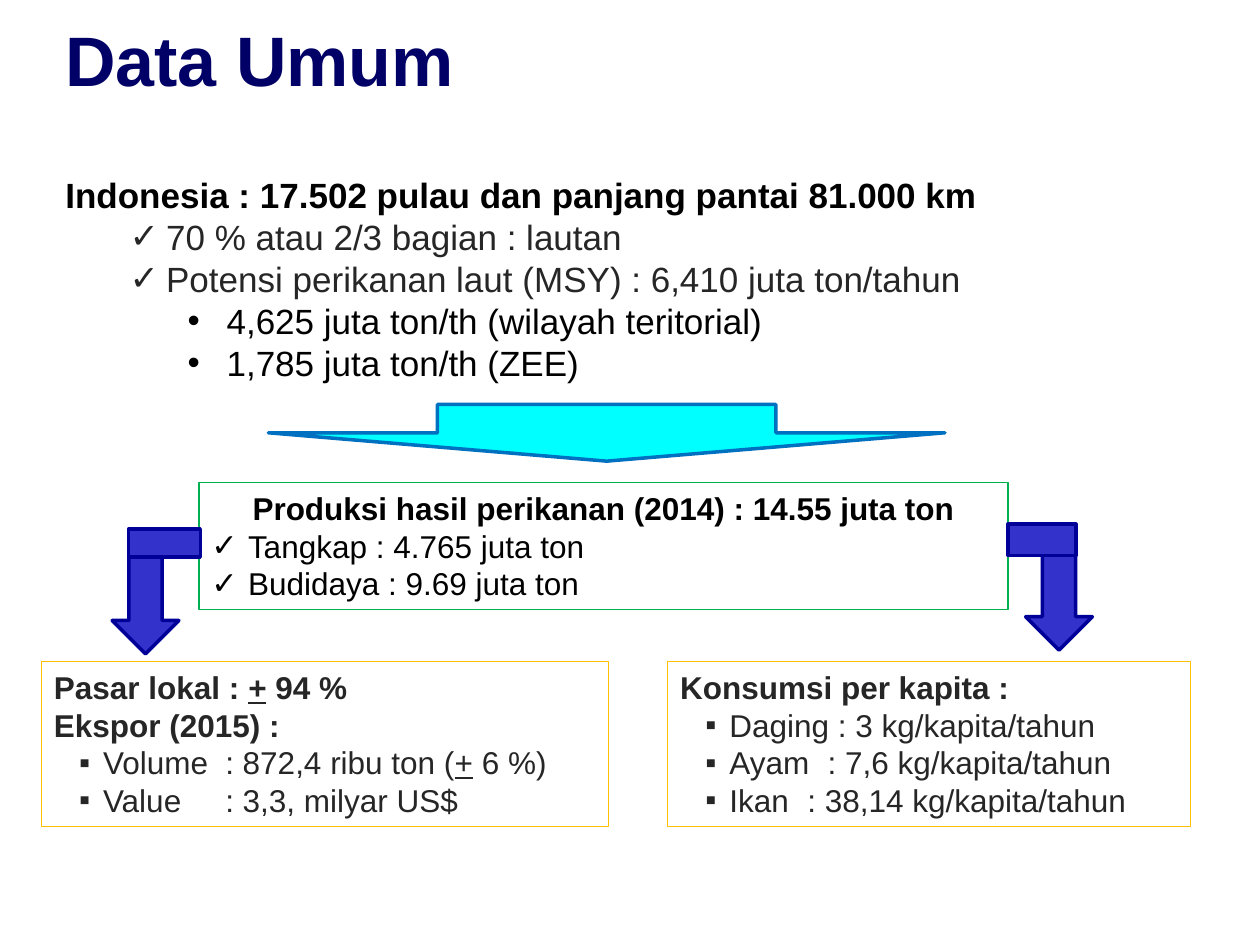
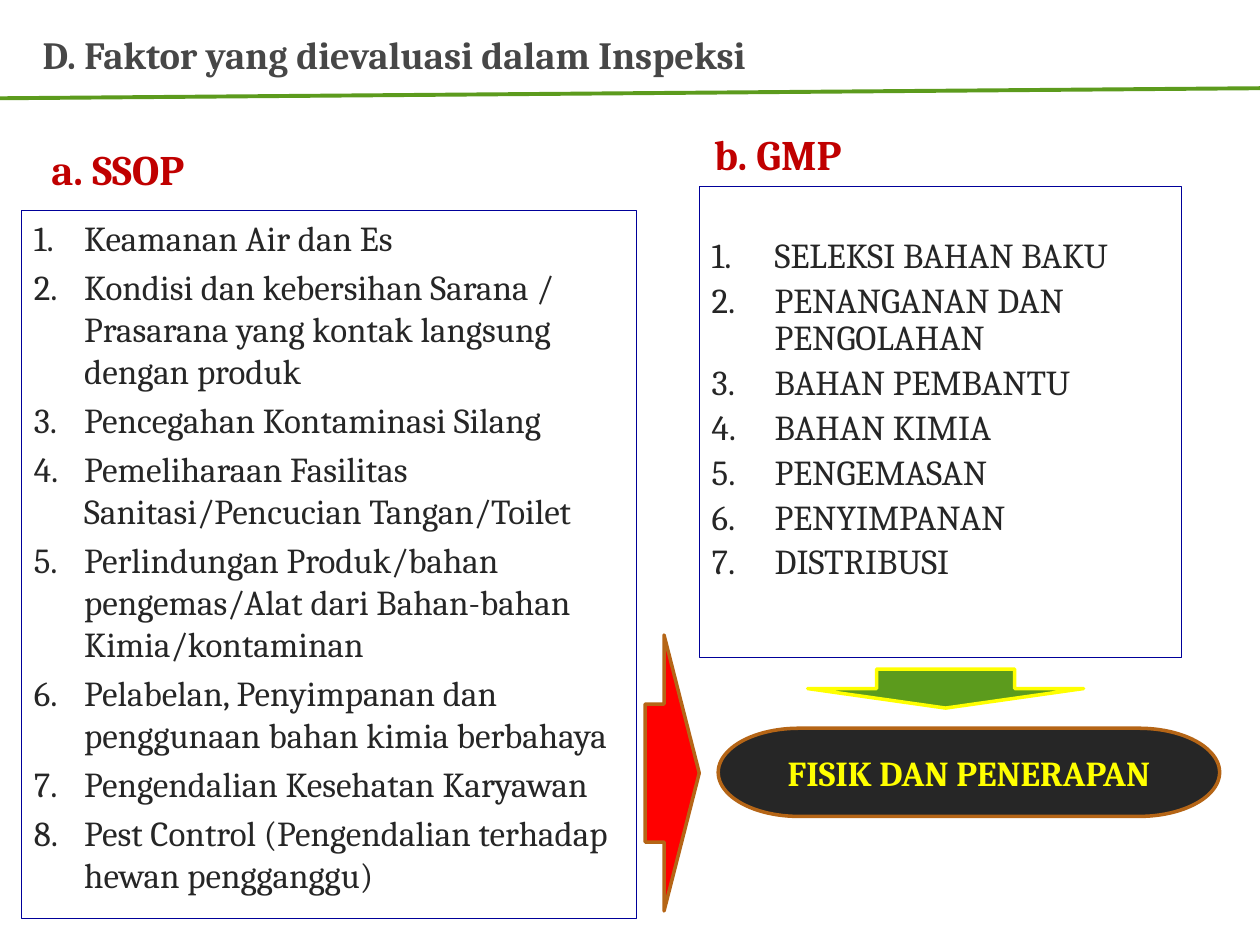
from dataclasses import dataclass
from typing import Optional

from lxml.etree import SubElement
from pptx import Presentation
from pptx.dml.color import RGBColor
from pptx.enum.shapes import MSO_CONNECTOR, MSO_SHAPE
from pptx.enum.text import MSO_ANCHOR, PP_ALIGN
from pptx.oxml.ns import qn
from pptx.slide import Slide
from pptx.util import Emu, Inches, Pt

BLACK = RGBColor(0x00, 0x00, 0x00)
WHITE = RGBColor(0xFF, 0xFF, 0xFF)
CHARCOAL = RGBColor(0x26, 0x26, 0x26)
GRAY = RGBColor(0x47, 0x47, 0x47)
MIDNIGHT = RGBColor(0x00, 0x00, 0x66)
NAVY = RGBColor(0x00, 0x00, 0x99)
INDIGO = RGBColor(0x33, 0x33, 0xCC)
BLUE = RGBColor(0x00, 0x70, 0xC0)
CYAN = RGBColor(0x00, 0xFF, 0xFF)
GREEN = RGBColor(0x00, 0xB0, 0x50)
LEAF = RGBColor(0x5C, 0x9B, 0x1D)
GOLD = RGBColor(0xFF, 0xC0, 0x00)
YELLOW = RGBColor(0xFF, 0xFF, 0x00)
RED = RGBColor(0xFF, 0x00, 0x00)
CRIMSON = RGBColor(0xC0, 0x00, 0x00)
BROWN = RGBColor(0xB5, 0x65, 0x16)

SLIDE_WIDTH, SLIDE_HEIGHT = Inches(10), Inches(7.5)
COLUMN = SLIDE_WIDTH // 100
ROW = SLIDE_HEIGHT // 75
NUMBERED = "arabicPeriod"
CHECK, DOT, SQUARE = "✓", "•", "▪"


@dataclass(frozen=True)
class Area:
    column: float
    row: float
    columns: float
    rows: float

    def lengths(self) -> tuple[Emu, ...]:
        return (Emu(round(self.column * COLUMN)), Emu(round(self.row * ROW)),
                Emu(round(self.columns * COLUMN)), Emu(round(self.rows * ROW)))


@dataclass(frozen=True)
class Style:
    font: str
    size: int
    color: RGBColor
    bold: bool = False


@dataclass(frozen=True)
class Line:
    text: str
    bold: bool = False
    bullet: str = ""
    margin: float = 0
    hanging: float = 0
    tab: float = 0
    align: PP_ALIGN = PP_ALIGN.LEFT


@dataclass(frozen=True)
class Panel:
    area: Area
    style: Style
    lines: list[Line]
    border: Optional[RGBColor] = None
    fill: Optional[RGBColor] = None
    shape: MSO_SHAPE = MSO_SHAPE.RECTANGLE
    border_width: float = 0.75
    anchor: MSO_ANCHOR = MSO_ANCHOR.TOP
    top_inset: float = 0.5
    spacing: float = 1
    before: float = 0


@dataclass(frozen=True)
class Block:
    area: Area
    fill: RGBColor
    border: RGBColor
    shape: MSO_SHAPE = MSO_SHAPE.DOWN_ARROW
    rotation: float = 0
    head: Optional[float] = None


def add_shape(page: Slide, kind: MSO_SHAPE, area: Area, fill: Optional[RGBColor],
              border: Optional[RGBColor], width: float):
    shape = page.shapes.add_shape(kind, *area.lengths())
    shape.shadow.inherit = False
    if fill is None:
        shape.fill.background()
    else:
        shape.fill.solid()
        shape.fill.fore_color.rgb = fill
    if border is None:
        shape.line.fill.background()
    else:
        shape.line.color.rgb = border
        shape.line.width = Pt(width)
    return shape


def add_block(page: Slide, block: Block) -> None:
    shape = add_shape(page, block.shape, block.area, block.fill, block.border, 2)
    shape.rotation = block.rotation
    if block.head is not None:
        shape.adjustments[1] = block.head


def set_indent(para, line: Line) -> None:
    properties = para._p.get_or_add_pPr()
    properties.set("marL", str(round(line.margin * COLUMN)))
    properties.set("indent", str(round(-line.hanging * COLUMN)))
    if line.bullet == NUMBERED:
        SubElement(properties, qn("a:buFont"), typeface="+mj-lt")
        SubElement(properties, qn("a:buAutoNum"), type=NUMBERED)
    elif line.bullet:
        SubElement(properties, qn("a:buFont"), typeface="Arial")
        SubElement(properties, qn("a:buChar"), char=line.bullet)
    else:
        SubElement(properties, qn("a:buNone"))
    if line.tab:
        tabs = SubElement(properties, qn("a:tabLst"))
        SubElement(tabs, qn("a:tab"), pos=str(round(line.tab * COLUMN)), algn="l")


def add_spans(para, line: Line, style: Style) -> None:
    for position, text in enumerate(line.text.split("_")):
        span = para.add_run()
        span.text = text
        span.font.name = style.font
        span.font.size = Pt(style.size)
        span.font.color.rgb = style.color
        span.font.bold = style.bold or line.bold
        span.font.underline = position % 2 == 1


def add_panel(page: Slide, panel: Panel) -> None:
    if panel.border or panel.fill:
        box = add_shape(page, panel.shape, panel.area, panel.fill,
                        panel.border, panel.border_width)
    else:
        box = page.shapes.add_textbox(*panel.area.lengths())
    frame = box.text_frame
    frame.word_wrap = True
    frame.vertical_anchor = panel.anchor
    frame.margin_top = round(panel.top_inset * ROW)
    for position, line in enumerate(panel.lines):
        para = frame.add_paragraph() if position else frame.paragraphs[0]
        para.alignment = line.align
        set_indent(para, line)
        para.line_spacing = panel.spacing
        if position:
            para.space_before = Pt(panel.before)
        add_spans(para, line, panel.style)


def add_rule(page: Slide, start_row: float, end_row: float) -> None:
    rule = page.shapes.add_connector(MSO_CONNECTOR.STRAIGHT, 0, round(start_row * ROW),
                                     SLIDE_WIDTH, round(end_row * ROW))
    rule.line.color.rgb = LEAF
    rule.line.width = Pt(2.25)
    SubElement(rule._element.spPr, qn("a:effectLst"))


def numbered(texts: list[str], indent: float) -> list[Line]:
    return [Line(text, bullet=NUMBERED, margin=indent, hanging=indent) for text in texts]


def heading(area: Area, text: str, style: Style, **options) -> Panel:
    return Panel(area, style, [Line(text)], **options)


def build_general_data(page: Slide) -> None:
    check = {"bullet": CHECK, "margin": 2.9, "hanging": 2.9}
    square = {"bullet": SQUARE, "margin": 3.9, "hanging": 1.9}
    body = Style("Arial", 18, CHARCOAL)
    facts = Area(4.2, 13.3, 82.5, 18.1)
    potential = {"bullet": CHECK, "margin": 8, "hanging": 2.9}
    zone = {"bullet": DOT, "margin": 12.8, "hanging": 3.1}
    add_panel(page, Panel(facts, Style("Arial", 20, BLACK), [
        Line("Indonesia : 17.502 pulau dan panjang pantai 81.000 km", bold=True),
        Line("70 % atau 2/3 bagian : lautan", **potential),
        Line("Potensi perikanan laut (MSY) : 6,410 juta ton/tahun", **potential),
        Line("4,625 juta ton/th (wilayah teritorial)", **zone),
        Line("1,785 juta ton/th (ZEE)", **zone)], fill=WHITE))
    for para in page.shapes[0].text_frame.paragraphs[1:3]:
        para.runs[0].font.color.rgb = CHARCOAL

    add_panel(page, Panel(Area(53, 52.5, 41.5, 13.1), body, [
        Line("Konsumsi per kapita :", bold=True),
        Line("Daging : 3 kg/kapita/tahun", **square),
        Line("Ayam\t: 7,6 kg/kapita/tahun", tab=11.7, **square),
        Line("Ikan\t: 38,14 kg/kapita/tahun", tab=10.1, **square)], GOLD, WHITE))
    add_panel(page, Panel(Area(15.8, 38.3, 64.2, 10.1), Style("Arial", 18, BLACK), [
        Line("Produksi hasil perikanan (2014) : 14.55 juta ton", bold=True,
             align=PP_ALIGN.CENTER),
        Line("Tangkap : 4.765 juta ton", **check),
        Line("Budidaya : 9.69 juta ton", **check)], GREEN, WHITE))
    add_panel(page, Panel(Area(3.3, 52.5, 45, 13.1), body, [
        Line("Pasar lokal : _+_ 94 %", bold=True),
        Line("Ekspor (2015) :", bold=True),
        Line("Volume\t: 872,4 ribu ton (_+_ 6 %)", tab=13.6, **square),
        Line("Value\t: 3,3, milyar US$", tab=13.6, **square)], GOLD, WHITE))

    add_block(page, Block(Area(21.3, 32.1, 53.7, 4.5), CYAN, BLUE))
    for arrow, elbow in ((Area(81.4, 43.3, 5.3, 8.3), Area(80, 41.6, 5.4, 2.5)),
                         (Area(8.9, 43.6, 5.3, 8.3), Area(10.2, 42, 5.7, 2.2))):
        add_block(page, Block(arrow, INDIGO, NAVY))
        add_block(page, Block(elbow, INDIGO, NAVY, MSO_SHAPE.RECTANGLE))
    add_panel(page, heading(Area(4.2, 0.8, 51.6, 7.7), "Data Umum",
                            Style("Arial", 40, MIDNIGHT, True)))


def build_inspection_factors(page: Slide) -> None:
    body = Style("Cambria", 20, CHARCOAL)
    section = Style("Cambria", 24, CRIMSON, True)
    add_panel(page, Panel(Area(1.7, 16.7, 48.8, 56.2), body, numbered([
        "Keamanan Air dan Es",
        "Kondisi dan kebersihan Sarana / Prasarana yang kontak langsung dengan produk",
        "Pencegahan Kontaminasi Silang",
        "Pemeliharaan Fasilitas Sanitasi/Pencucian Tangan/Toilet",
        "Perlindungan Produk/bahan pengemas/Alat dari Bahan-bahan Kimia/kontaminan",
        "Pelabelan, Penyimpanan dan penggunaan bahan kimia berbahaya",
        "Pengendalian Kesehatan Karyawan",
        "Pest Control (Pengendalian terhadap hewan pengganggu)"], 4), NAVY, before=4))
    add_panel(page, Panel(Area(55.5, 14.8, 38.3, 37.4), body, numbered([
        "SELEKSI BAHAN BAKU", "PENANGANAN DAN PENGOLAHAN", "BAHAN PEMBANTU",
        "BAHAN KIMIA", "PENGEMASAN", "PENYIMPANAN", "DISTRIBUSI"], 5),
        NAVY, top_inset=4.1, spacing=0.9, before=4))
    add_panel(page, heading(Area(3.1, 10.9, 42.2, 5), "a. SSOP", section))
    add_panel(page, heading(Area(55.7, 10.2, 13.3, 4.6), "b. GMP", section, spacing=0.9))
    add_panel(page, heading(Area(2.4, 1.2, 90.6, 6.2),
                            "D. Faktor yang dievaluasi dalam Inspeksi",
                            Style("Cambria", 22, GRAY, True), anchor=MSO_ANCHOR.MIDDLE))
    add_rule(page, 7.8, 7)
    add_panel(page, Panel(Area(57, 57.8, 39.8, 7), Style("Cambria", 20, YELLOW, True),
                          [Line("FISIK DAN PENERAPAN", align=PP_ALIGN.CENTER)],
                          BROWN, CHARCOAL, MSO_SHAPE.FLOWCHART_TERMINATOR, 2,
                          MSO_ANCHOR.MIDDLE))
    add_block(page, Block(Area(64.1, 53.1, 21.9, 3.1), LEAF, YELLOW))
    add_block(page, Block(Area(42.4, 59.2, 21.9, 4.3), RED, BROWN, rotation=270, head=0.65))


def main() -> None:
    deck = Presentation()
    deck.slide_width, deck.slide_height = SLIDE_WIDTH, SLIDE_HEIGHT
    for build in (build_general_data, build_inspection_factors):
        build(deck.slides.add_slide(deck.slide_layouts[6]))
    deck.save("out.pptx")


if __name__ == "__main__":
    main()
